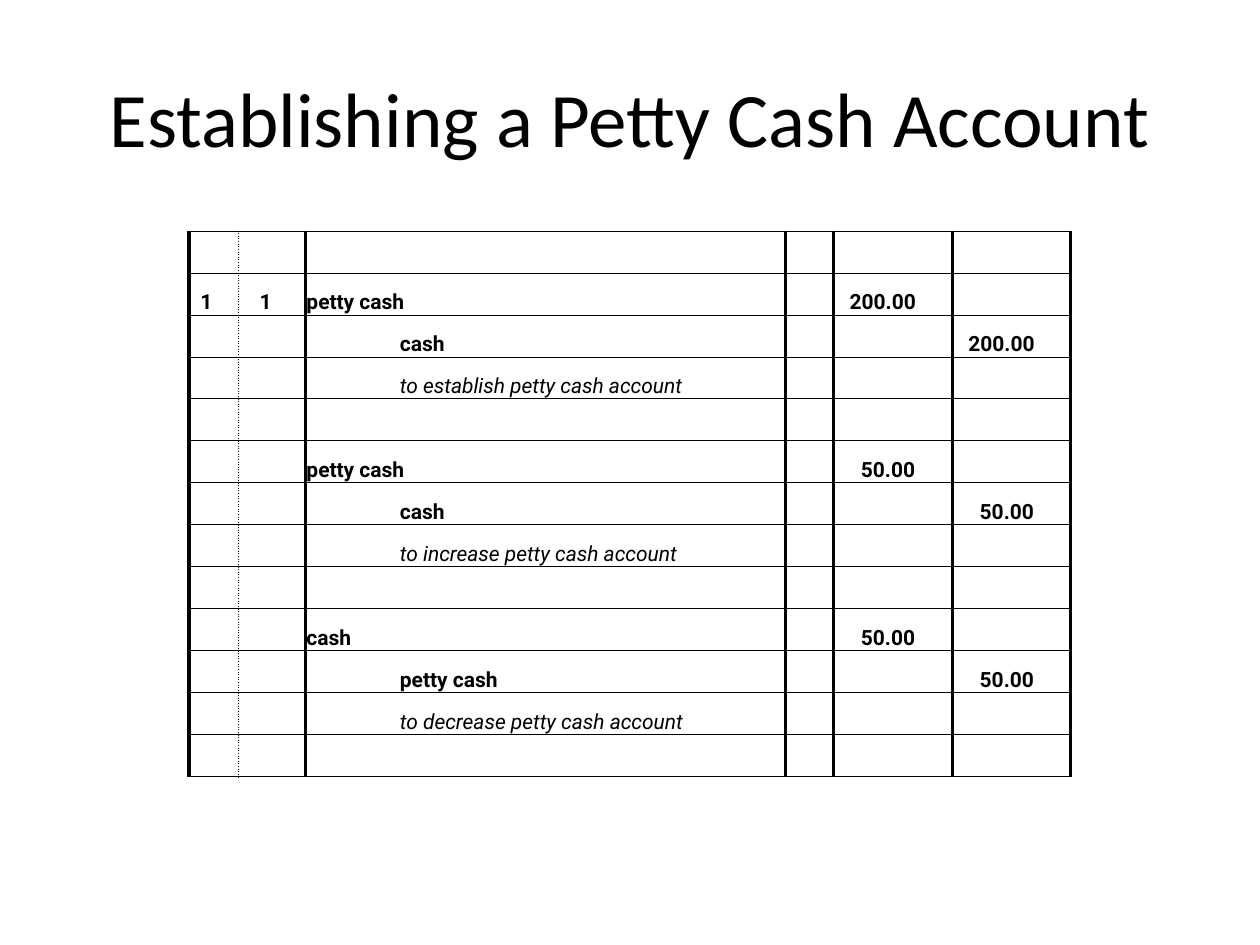
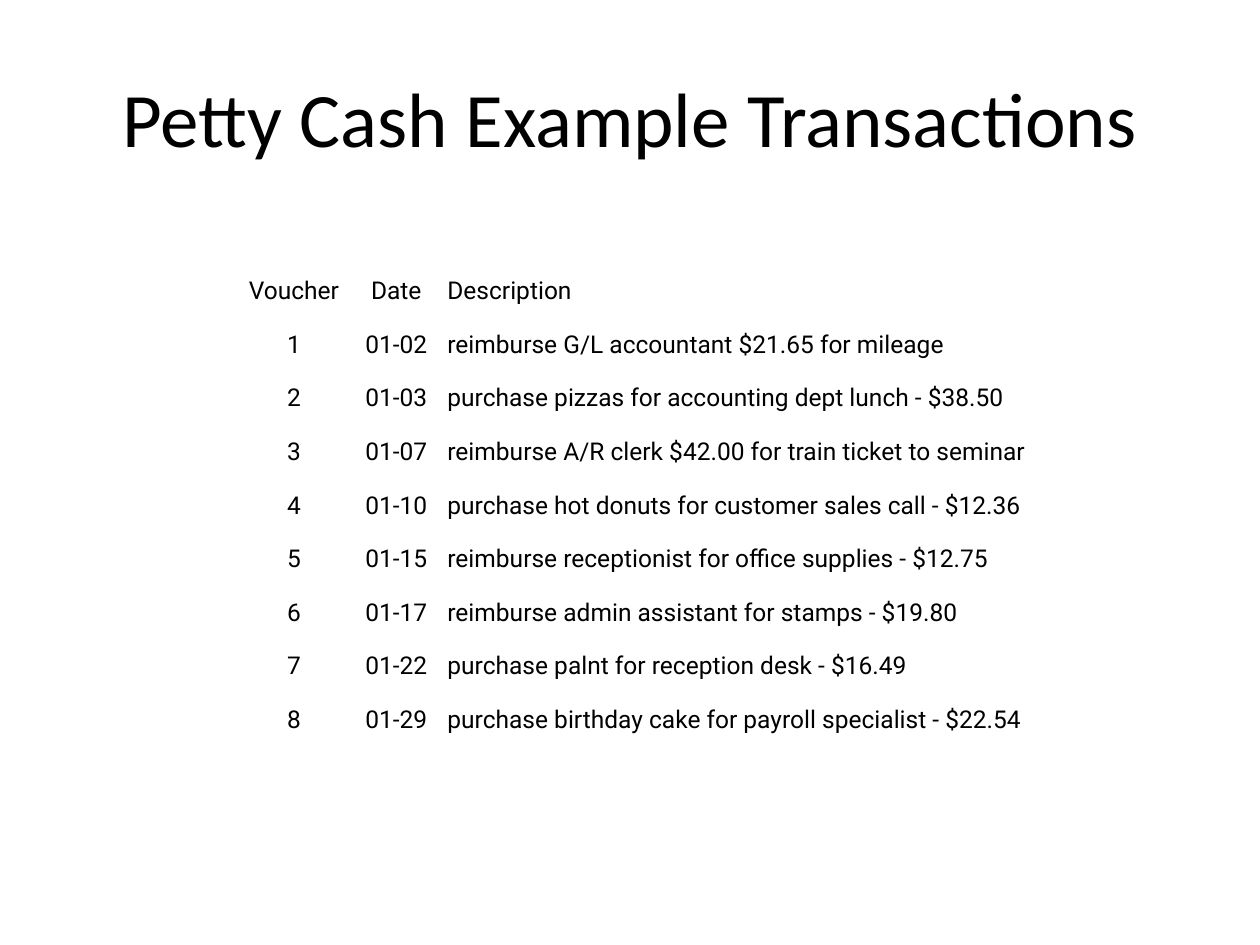
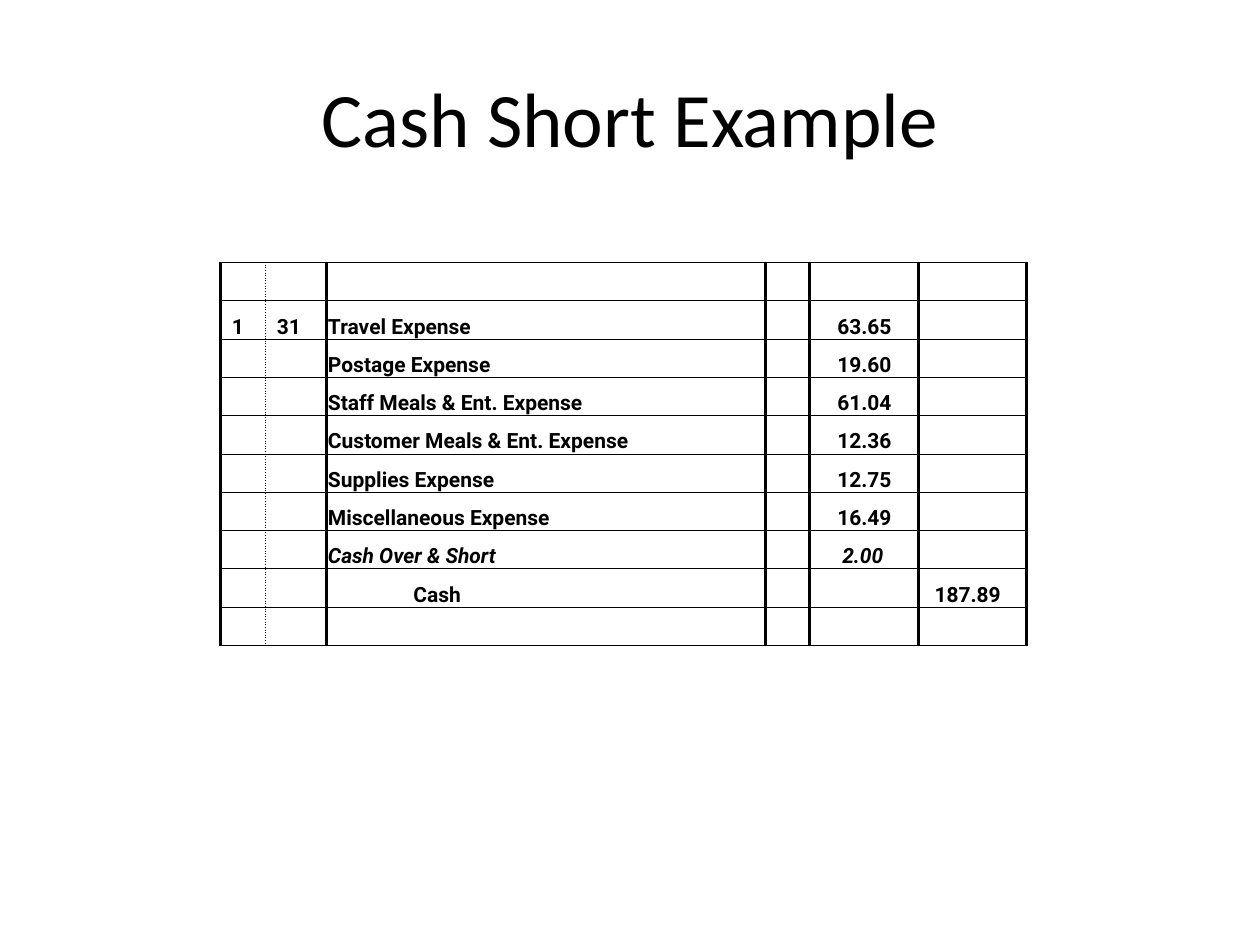
from dataclasses import dataclass

from lxml.etree import SubElement
from pptx import Presentation
from pptx.dml.color import RGBColor
from pptx.enum.text import MSO_ANCHOR, PP_ALIGN
from pptx.oxml.ns import qn
from pptx.util import Inches, Pt

BLACK = "000000"
COLS, ROWS = 120, 90  # slide grid: twelve units to the inch

# Ledger columns: month, day, account, entry, reference, debit, credit
LEDGER_COLS = [0.39, 0.53, 0.74, 3.06, 0.38, 0.94, 0.94]
THICK, THIN, DOTTED, NONE = (2, "solid"), (0.5, "solid"), (0.5, "dot"), None
LEDGER_EDGES = [THICK, DOTTED, THICK, NONE, THICK, THICK, THICK, THICK]
AMOUNT_INDENT = {6: 0.12, 5: 0.21, 4: 0.25}  # inches, by length of the amount


def color(value):
    return RGBColor.from_string(value)


@dataclass
class Line:
    """One ledger line; a debit starts at the account column."""
    text: str = ""
    debit: str = ""
    credit: str = ""
    month: str = ""
    day: str = ""
    bold: bool = True
    italic: bool = False


def note(text):
    return Line(text, bold=False, italic=True)


class Deck:
    head_font, body_font = "Calibri", "Roboto"
    head_size, ledger_size, list_size = 44, 12, 14

    def __init__(self):
        self.prs = Presentation()
        self.prs.slide_width, self.prs.slide_height = Inches(10), Inches(7.5)
        self.slide = None

    def box(self, col, row, cols, rows):
        dx, dy = self.prs.slide_width / COLS, self.prs.slide_height / ROWS
        return [int(n) for n in (col * dx, row * dy, cols * dx, rows * dy)]

    def style(self, p, font, size, bold=False, italic=False):
        p.font.name, p.font.size = font, Pt(size)
        p.font.bold, p.font.italic = bold, italic
        p.font.color.rgb = color(BLACK)

    def add_slide(self, title):
        self.slide = self.prs.slides.add_slide(self.prs.slide_layouts[5])
        sp = self.slide.shapes.title
        sp.left, sp.top, sp.width, sp.height = self.box(6, 3.6, 108, 15)
        tf = sp.text_frame
        tf.text, tf.vertical_anchor = title, MSO_ANCHOR.MIDDLE
        p = tf.paragraphs[0]
        p.alignment = PP_ALIGN.CENTER
        self.style(p, self.head_font, self.head_size)

    def table(self, area, weights, count):
        """An unstyled table whose columns share the width by weight."""
        left, top, width, height = self.box(*area)
        tbl = self.slide.shapes.add_table(
            count, len(weights), left, top, width, height).table
        tbl.first_row = tbl.horz_banding = False
        for column, weight in zip(tbl.columns, weights):
            column.width = int(width * weight / sum(weights))
        for row in tbl.rows:
            row.height = height // count
        return tbl

    def cell(self, cell, text, size, align=PP_ALIGN.LEFT, indent=0,
             bold=False, italic=False):
        cell.fill.background()
        cell.vertical_anchor = MSO_ANCHOR.BOTTOM
        cell.margin_left = cell.margin_right = cell.margin_top = Inches(0.01)
        cell.margin_bottom = 0
        cell.text = text
        p = cell.text_frame.paragraphs[0]
        p.alignment = align
        self.style(p, self.body_font, size, bold, italic)
        if indent:
            p._p.get_or_add_pPr().set("marL", str(Inches(indent)))
        if not text:  # keeps an empty row from growing
            SubElement(p._p, qn("a:endParaRPr"), sz=str(size * 100))

    def borders(self, cell, left, right, top=THIN, bottom=THIN):
        tcPr = cell._tc.get_or_add_tcPr()
        sides = zip(("a:lnL", "a:lnR", "a:lnT", "a:lnB"),
                    (left, right, top, bottom))
        for i, (tag, edge) in enumerate(sides):
            width, dash = edge or (0, "solid")
            ln = SubElement(tcPr, qn(tag), w=str(Pt(width)))
            tcPr.insert(i, ln)  # lines come before the fill
            if edge is NONE:
                SubElement(ln, qn("a:noFill"))
                continue
            fill = SubElement(ln, qn("a:solidFill"))
            SubElement(fill, qn("a:srgbClr"), val=BLACK)
            SubElement(ln, qn("a:prstDash"), val=dash)

    def ledger(self, area, lines):
        tbl = self.table(area, LEDGER_COLS, len(lines))
        for r, line in enumerate(lines):
            is_debit = bool(line.debit)
            account, entry = (line.text, "") if is_debit else ("", line.text)
            texts = [line.month, line.day, account, entry, "",
                     line.debit, line.credit]
            indents = [0.08, 0.08 * (3 - len(line.day)), 0, 0, 0,
                       AMOUNT_INDENT.get(len(line.debit), 0),
                       AMOUNT_INDENT.get(len(line.credit), 0)]
            for c, (text, indent) in enumerate(zip(texts, indents)):
                cell = tbl.cell(r, c)
                self.cell(cell, text, self.ledger_size, indent=indent,
                          bold=line.bold, italic=line.italic)
                spans = is_debit and c == 2
                self.borders(cell, LEDGER_EDGES[c],
                             LEDGER_EDGES[c + 2 if spans else c + 1])
            if is_debit:
                tbl.cell(r, 2).merge(tbl.cell(r, 3))

    def listing(self, area, weights, rows):
        tbl = self.table(area, weights, len(rows))
        aligns = [PP_ALIGN.CENTER, PP_ALIGN.CENTER, PP_ALIGN.LEFT]
        for r, row in enumerate(rows):
            for c, (text, align) in enumerate(zip(row, aligns)):
                cell = tbl.cell(r, c)
                self.cell(cell, text, self.list_size, align)
                self.borders(cell, NONE, NONE, NONE, NONE)


def main():
    deck = Deck()

    # Opening, increasing and decreasing the account
    deck.add_slide("Establishing a Petty Cash Account")
    deck.ledger((18, 22, 84, 52), [
        Line(),
        Line("petty cash", debit="200.00", month="1", day="1"),
        Line("cash", credit="200.00"),
        note("to establish petty cash account"),
        Line(),
        Line("petty cash", debit="50.00"),
        Line("cash", credit="50.00"),
        note("to increase petty cash account"),
        Line(),
        Line("cash", debit="50.00"),
        Line("petty cash", credit="50.00"),
        note("to decrease petty cash account"),
        Line(),
    ])

    # Vouchers of the month
    deck.add_slide("Petty Cash Example Transactions")
    vouchers = [
        ("01-02", "reimburse G/L accountant $21.65 for mileage"),
        ("01-03", "purchase pizzas for accounting dept lunch - $38.50"),
        ("01-07", "reimburse A/R clerk $42.00 for train ticket to seminar"),
        ("01-10", "purchase hot donuts for customer sales call - $12.36"),
        ("01-15", "reimburse receptionist for office supplies - $12.75"),
        ("01-17", "reimburse admin assistant for stamps - $19.80"),
        ("01-22", "purchase palnt for reception desk - $16.49"),
        ("01-29", "purchase birthday cake for payroll specialist - $22.54"),
    ]
    deck.listing((23, 24, 75, 46), [10, 9.5, 55.5], [
        ("Voucher", "Date", "Description"),
        *((str(n), *voucher) for n, voucher in enumerate(vouchers, 1)),
    ])

    # Replenishing with a shortage
    deck.add_slide("Cash Short Example")
    deck.ledger((21, 25, 76.8, 36.5), [
        Line(),
        Line("Travel Expense", debit="63.65", month="1", day="31"),
        Line("Postage Expense", debit="19.60"),
        Line("Staff Meals & Ent. Expense", debit="61.04"),
        Line("Customer Meals & Ent. Expense", debit="12.36"),
        Line("Supplies Expense", debit="12.75"),
        Line("Miscellaneous Expense", debit="16.49"),
        Line("Cash Over & Short", debit="2.00", italic=True),
        Line("Cash", credit="187.89"),
        Line(),
    ])

    deck.prs.save("out.pptx")


if __name__ == "__main__":
    main()
